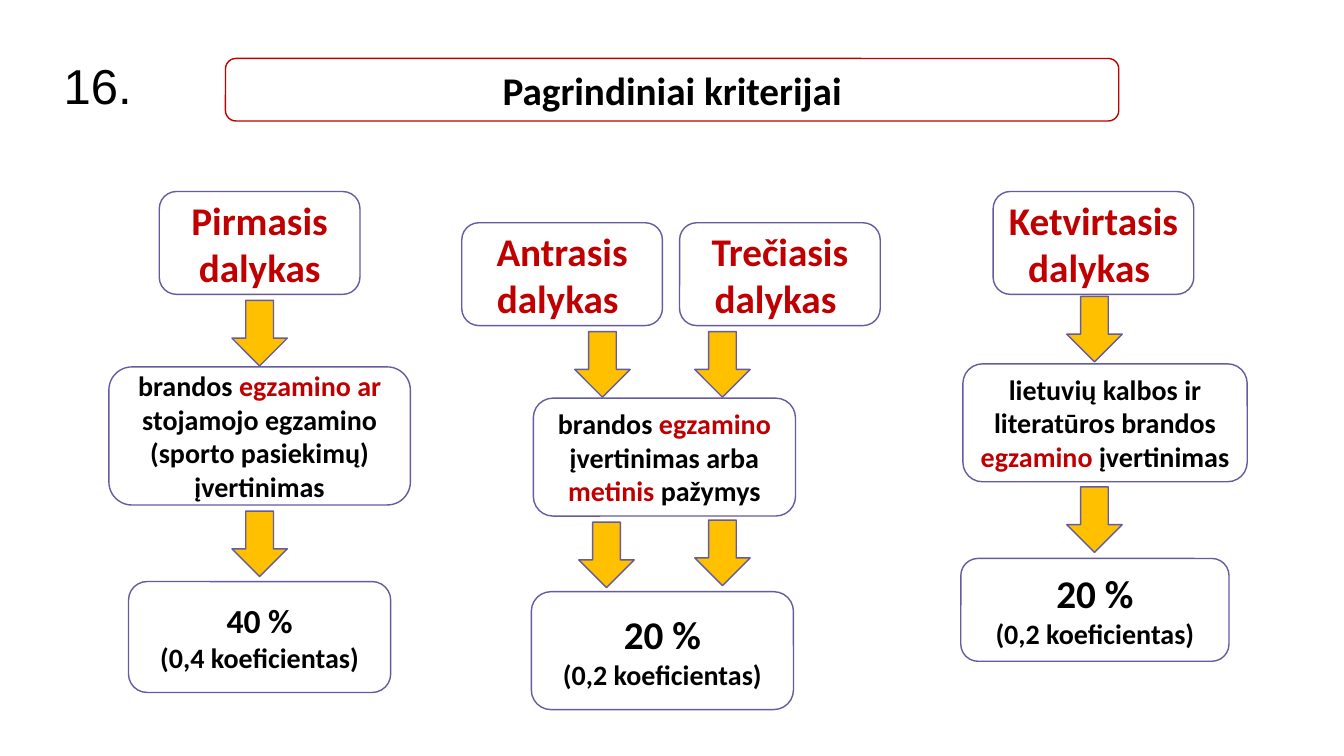
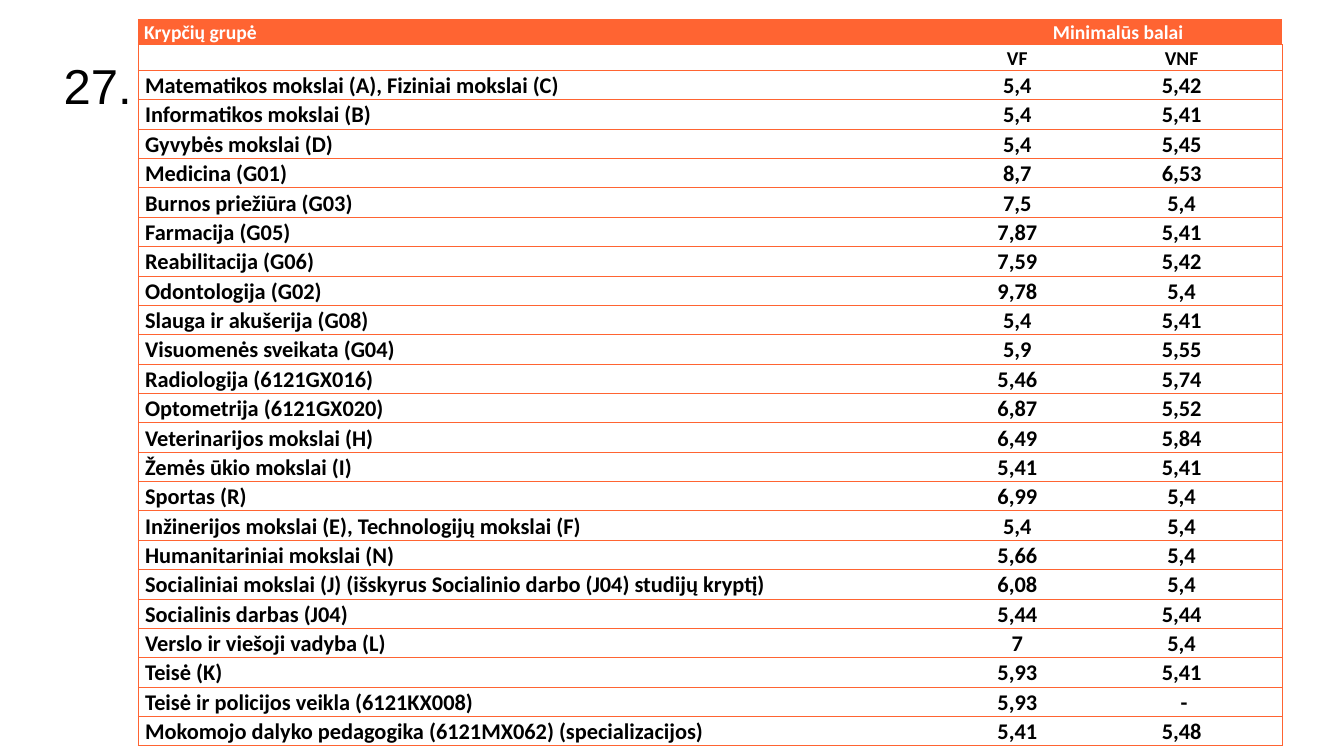
from lxml import etree
from pptx import Presentation
from pptx.dml.color import RGBColor as Rgb
from pptx.enum.shapes import MSO_SHAPE as Kind
from pptx.enum.text import MSO_ANCHOR as Anchor, PP_ALIGN as Align
from pptx.oxml.ns import qn
from pptx.util import Inches, Pt

# Shared grid: 80 columns by 45 rows of square cells
WIDE, HIGH = 13.33, 7.5
CELL = HIGH / 45

# Shared colours and font
BLACK, WHITE, RED = "000000", "FFFFFF", "C00000"
VIOLET, GOLD, ORANGE = "645C9F", "FFC000", "FF6432"
FONT = "Calibri"

# Boxes: centre, top, width, height, sizes, lines; "|" switches red on and off
BOXES = [
    (15.45, 11.4, 11.94, 6.12, [28], ["|Pirmasis dalykas"]),
    (33.45, 13.26, 11.94, 6.12, [28], ["|Antrasis dalykas "]),
    (46.41, 13.26, 11.94, 6.12, [28], ["|Trečiasis dalykas "]),
    (65.07, 11.4, 11.94, 6.12, [28, 28], ["|Ketvirtasis", "|dalykas "]),
    (15.45, 21.84, 17.94, 8.22, [20],
     ["brandos |egzamino ar |stojamojo egzamino (sporto pasiekimų) įvertinimas"]),
    (39.54, 23.7, 15.6, 7.02, [20],
     ["brandos |egzamino| įvertinimas arba |metinis| pažymys"]),
    (65.76, 21.66, 16.92, 7.02, [20],
     ["lietuvių kalbos ir literatūros brandos |egzamino |įvertinimas"]),
    (15.45, 34.62, 15.6, 6.6, [24, 20], ["40 %", "(0,4 koeficientas)"]),
    (39.42, 35.22, 15.6, 7.02, [28, 20], ["20 %", "(0,2 koeficientas)"]),
    (65.16, 33.24, 15.96, 6.12, [28, 20], ["20 %", "(0,2 koeficientas)"]),
]

# Arrows: centre and top
ARROWS = [
    (15.45, 17.88), (35.85, 19.74), (42.99, 19.74), (65.13, 17.64),
    (15.45, 30.42), (36.09, 31.08), (42.99, 30.96), (65.13, 28.98),
]

SCORES = [
    ("Krypčių grupė", "Minimalūs balai", ""),
    ("", "VF", "VNF"),
    ("Matematikos mokslai (A), Fiziniai mokslai (C)", "5,4", "5,42"),
    ("Informatikos mokslai (B)", "5,4", "5,41"),
    ("Gyvybės mokslai (D)", "5,4", "5,45"),
    ("Medicina (G01)", "8,7", "6,53"),
    ("Burnos priežiūra (G03)", "7,5", "5,4"),
    ("Farmacija (G05)", "7,87", "5,41"),
    ("Reabilitacija (G06)", "7,59", "5,42"),
    ("Odontologija (G02)", "9,78", "5,4"),
    ("Slauga ir akušerija (G08)", "5,4", "5,41"),
    ("Visuomenės sveikata (G04)", "5,9", "5,55"),
    ("Radiologija (6121GX016)", "5,46", "5,74"),
    ("Optometrija (6121GX020)", "6,87", "5,52"),
    ("Veterinarijos mokslai (H)", "6,49", "5,84"),
    ("Žemės ūkio mokslai (I)", "5,41", "5,41"),
    ("Sportas (R)", "6,99", "5,4"),
    ("Inžinerijos mokslai (E), Technologijų mokslai (F)", "5,4", "5,4"),
    ("Humanitariniai mokslai (N)", "5,66", "5,4"),
    ("Socialiniai mokslai (J) (išskyrus Socialinio darbo (J04) studijų kryptį)",
     "6,08", "5,4"),
    ("Socialinis darbas (J04)", "5,44", "5,44"),
    ("Verslo ir viešoji vadyba (L)", "7", "5,4"),
    ("Teisė (K)", "5,93", "5,41"),
    ("Teisė ir policijos veikla (6121KX008)", "5,93", " -"),
    ("Mokomojo dalyko pedagogika (6121MX062) (specializacijos)", "5,41", "5,48"),
]


def grid(*cells):
    return [Inches(n * CELL) for n in cells]


def tint(text):
    return Rgb.from_string(text)


def style(font, size, hue, bold=True, name=FONT):
    font.name, font.size, font.bold = name, Pt(size), bold
    font.color.rgb = tint(hue)


def page(deck, number):
    """Add a slide with its number in the body placeholder."""
    slide = deck.slides.add_slide(deck.slide_layouts[2])
    title = slide.shapes.title._element
    title.getparent().remove(title)
    body = slide.placeholders[1]
    body.left, body.top, body.width, body.height = grid(3.18, 2.76, 5.76, 3.72)
    frame = body.text_frame
    frame.text = number
    frame.vertical_anchor = Anchor.TOP
    frame.margin_top = grid(0.55)[0]
    par = frame.paragraphs[0]
    par.space_before = Pt(0)
    style(par.runs[0].font, 35, BLACK, False, "Arial")
    return slide


def block(slide, kind, mid, top, wide, high, fill=None, line=VIOLET):
    """Add a preset shape centred on a grid column."""
    shape = slide.shapes.add_shape(kind, *grid(mid - wide / 2, top, wide, high))
    shape.shadow.inherit = False
    if fill:
        shape.fill.solid()
        shape.fill.fore_color.rgb = tint(fill)
    else:
        shape.fill.background()
    shape.line.color.rgb = tint(line)
    shape.line.width = Pt(1)
    return shape


def write(shape, sizes, lines):
    """Write centred lines, with the marked parts in red."""
    frame = shape.text_frame
    frame.word_wrap = True
    frame.vertical_anchor = Anchor.MIDDLE
    frame.text = "\n".join(line.replace("|", "") for line in lines)
    for par, size, line in zip(frame.paragraphs, sizes, lines):
        par.alignment = Align.CENTER
        par.clear()
        for spot, part in enumerate(line.split("|")):
            if part:
                run = par.add_run()
                run.text = part
                style(run.font, size, RED if spot % 2 else BLACK)


def edge(cell, col):
    """Rule a cell above and below, and at the table's outer sides."""
    props = cell._tc.get_or_add_tcPr()
    shown = {"lnL": col == 0, "lnR": col == 2, "lnT": True, "lnB": True}
    for tag, seen in shown.items():
        line = etree.SubElement(props, qn("a:" + tag), w=str(Pt(0.5)))
        if seen:
            fill = etree.SubElement(line, qn("a:solidFill"))
            etree.SubElement(fill, qn("a:srgbClr"), val=ORANGE)
        else:
            etree.SubElement(line, qn("a:noFill"))


def fill_cell(cell, text, row, col):
    head = row < 2
    size = 14 if head else 16
    edge(cell, col)
    cell.fill.solid()
    cell.fill.fore_color.rgb = tint(WHITE if row else ORANGE)
    cell.margin_left = cell.margin_right = Inches(0.06 if head else 0.07)
    cell.margin_top = cell.margin_bottom = 0
    cell.vertical_anchor = Anchor.MIDDLE if head else Anchor.BOTTOM
    cell.text_frame.text = text
    par = cell.text_frame.paragraphs[0]
    par.alignment = Align.CENTER if col else Align.LEFT
    par.line_spacing = 1.07
    for run in par.runs:
        style(run.font, size, BLACK if row else WHITE)
    if not text:
        etree.SubElement(par._p, qn("a:endParaRPr"), sz=str(size * 100))


def chart_flow(slide):
    """Draw the title, the boxes and the arrows between them."""
    title = block(slide, Kind.ROUNDED_RECTANGLE, 40, 3.48, 53.16, 3.72, WHITE, RED)
    write(title, [28], ["Pagrindiniai kriterijai"])
    for *place, sizes, lines in BOXES:
        write(block(slide, Kind.ROUNDED_RECTANGLE, *place), sizes, lines)
    for mid, top in ARROWS:
        block(slide, Kind.DOWN_ARROW, mid, top, 3.3, 3.9, GOLD)


def score_table(slide):
    """Build the table of minimum scores."""
    cols = grid(48.54, 7.56, 12)
    rows = grid(1.52, 1.52, *[1.75] * (len(SCORES) - 2))
    table = slide.shapes.add_table(
        len(rows), len(cols), *grid(8.22, 1.14), sum(cols), sum(rows)).table
    table.first_row = table.horz_banding = False
    for col, wide in zip(table.columns, cols):
        col.width = wide
    for row, high in zip(table.rows, rows):
        row.height = high
    for row, texts in enumerate(SCORES):
        for col, text in enumerate(texts):
            fill_cell(table.cell(row, col), text, row, col)
    table.cell(0, 1).merge(table.cell(0, 2))


def main():
    deck = Presentation()
    deck.slide_width, deck.slide_height = Inches(WIDE), Inches(HIGH)
    chart_flow(page(deck, "16."))
    score_table(page(deck, "27."))
    deck.save("out.pptx")


if __name__ == "__main__":
    main()
